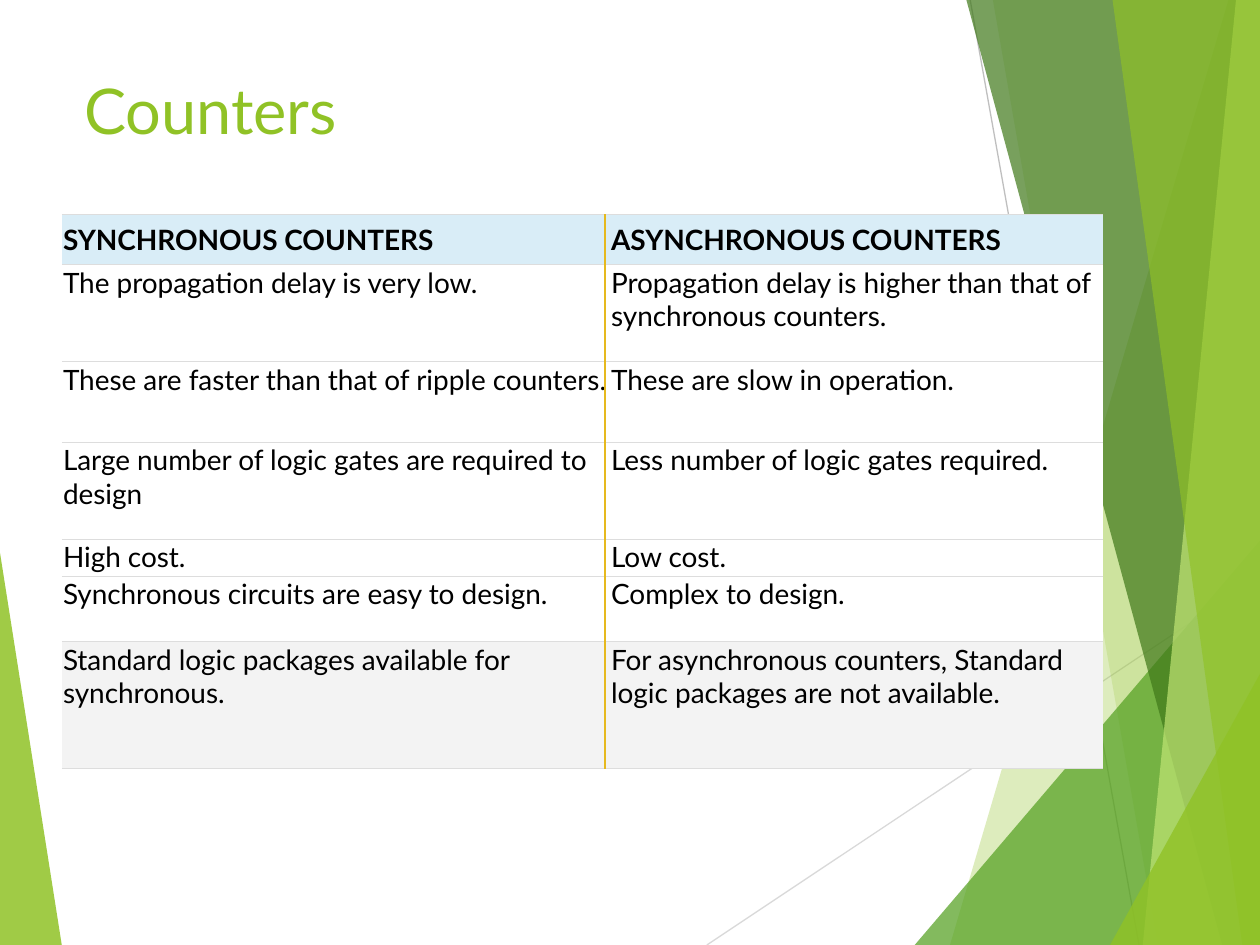
from dataclasses import dataclass

from lxml.etree import SubElement
from pptx import Presentation
from pptx.dml.color import RGBColor
from pptx.enum.shapes import MSO_CONNECTOR
from pptx.enum.text import MSO_ANCHOR
from pptx.oxml.ns import qn
from pptx.util import Inches, Pt

WIDTH, HEIGHT = Inches(10), Inches(7.5)


@dataclass(frozen=True)
class Theme:
    """Colours and type sizes of the slide."""

    font: str = "Lato"
    title_size: int = 36
    body_size: int = 16
    text: str = "000000"
    lime: str = "90C226"
    pale_lime: str = "C0E474"
    green: str = "54A021"
    dark_green: str = "3F7819"
    light_rule: str = "D9D9D9"
    dark_rule: str = "BFBFBF"
    divider: str = "E6B91E"
    header_fill: str = "D9EDF7"
    row_fill: str = "FFFFFF"
    last_fill: str = "F3F3F3"
    border: str = "DDDDDD"
    border_width: float = 0.3


THEME = Theme()

TABLE_LEFT, TABLE_TOP = 4.9, 22.67
COLUMNS = [43.5, 39.1]
ROWS = [
    (5.33, "SYNCHRONOUS COUNTERS", "ASYNCHRONOUS COUNTERS"),
    (10.27, "The propagation delay is very low.",
     "Propagation delay is higher than that of synchronous counters."),
    (8.53, "These are faster than that of ripple counters.",
     "These are slow in operation."),
    (10.27, "Large number of logic gates are required to design",
     "Less number of logic gates required."),
    (3.87, "High cost.", "Low cost."),
    (6.93, "Synchronous circuits are easy to design.", "Complex to design."),
    (13.47, "Standard logic packages available for synchronous.",
     "For asynchronous counters, Standard logic packages are not available."),
]


def across(share):
    """Turn a percentage of the slide's width into a length."""
    return round(WIDTH * share / 100)


def down(share):
    """Turn a percentage of the slide's height into a length."""
    return round(HEIGHT * share / 100)


def band(top, bottom):
    """Outline the area right of a slanted edge that crosses the whole slide."""
    return [(top, 0), (bottom, 100), (100, 100), (100, 0)]


def corner(left, top):
    """Outline a triangle in the bottom right corner."""
    return [(left, 100), (100, top), (100, 100)]


def add_facet(slide, outline, color, opacity):
    """Add a translucent polygon."""
    points = [(across(x), down(y)) for x, y in outline]
    builder = slide.shapes.build_freeform(*points[0])
    builder.add_line_segments(points[1:], close=True)
    shape = builder.convert_to_shape()
    shape.shadow.inherit = False
    shape.line.fill.background()
    shape.fill.solid()
    shape.fill.fore_color.rgb = RGBColor.from_string(color)
    tint = shape._element.spPr.find(qn("a:solidFill"))[0]
    SubElement(tint, qn("a:alpha")).set("val", str(opacity * 1000))


def add_rule(slide, start, end, color, width):
    """Add a straight line between two points."""
    connector = slide.shapes.add_connector(
        MSO_CONNECTOR.STRAIGHT,
        across(start[0]), down(start[1]), across(end[0]), down(end[1]))
    connector.line.color.rgb = RGBColor.from_string(color)
    connector.line.width = Pt(width)
    SubElement(connector._element.spPr, qn("a:effectLst"))


def write(text_frame, text, size, color, bold=False):
    """Write one run into the first paragraph of a text frame."""
    run = text_frame.paragraphs[0].add_run()
    run.text = text
    run.font.name = THEME.font
    run.font.size = Pt(size)
    run.font.bold = bold
    run.font.color.rgb = RGBColor.from_string(color)


def add_title(slide, text):
    """Add the slide's title."""
    box = slide.shapes.add_textbox(across(5.7), down(6.93), across(74.8), down(13.33))
    box.text_frame.word_wrap = True
    write(box.text_frame, text, THEME.title_size, THEME.lime)


def set_borders(cell):
    """Give a cell thin horizontal borders and no vertical ones."""
    properties = cell._tc.get_or_add_tcPr()
    for side in ("lnL", "lnR"):
        SubElement(SubElement(properties, qn(f"a:{side}")), qn("a:noFill"))
    for side in ("lnT", "lnB"):
        line = SubElement(properties, qn(f"a:{side}"), w=str(Pt(THEME.border_width)))
        fill = SubElement(line, qn("a:solidFill"))
        SubElement(fill, qn("a:srgbClr"), val=THEME.border)


def fill_cell(cell, text, fill, is_header):
    """Format one table cell and write its text."""
    cell.margin_left = cell.margin_right = Inches(0.01)
    cell.margin_top = cell.margin_bottom = Inches(0.01)
    cell.vertical_anchor = MSO_ANCHOR.MIDDLE if is_header else MSO_ANCHOR.TOP
    set_borders(cell)
    cell.fill.solid()
    cell.fill.fore_color.rgb = RGBColor.from_string(fill)
    write(cell.text_frame, text, THEME.body_size, THEME.text, is_header)


def add_comparison(slide):
    """Add the table that compares both kinds of counter."""
    height = sum(row[0] for row in ROWS)
    table = slide.shapes.add_table(
        len(ROWS), len(COLUMNS), across(TABLE_LEFT), down(TABLE_TOP),
        across(sum(COLUMNS)), down(height)).table
    table.first_row = table.horz_banding = False
    for column, share in zip(table.columns, COLUMNS):
        column.width = across(share)
    fills = [THEME.header_fill] + [THEME.row_fill] * (len(ROWS) - 2) + [THEME.last_fill]
    for index, ((share, *texts), fill) in enumerate(zip(ROWS, fills)):
        table.rows[index].height = down(share)
        for cell, text in zip(table.rows[index].cells, texts):
            fill_cell(cell, text, fill, index == 0)
    add_rule(slide, (48, TABLE_TOP), (48, TABLE_TOP + height), THEME.divider, 1)


def add_backdrop(slide):
    """Add the slanted facets and thin lines behind the content."""
    add_facet(slide, [(0, 58.5), (4.9, 100), (0, 100)], THEME.lime, 85)
    add_rule(slide, (56.1, 100), (100, 61), THEME.light_rule, 0.75)
    add_rule(slide, (77, 0), (90.4, 100), THEME.dark_rule, 0.75)
    facets = [
        (band(97.5, 75.4), THEME.lime, 30),
        (band(78.8, 91.9), THEME.lime, 20),
        (corner(72.6, 57.2), THEME.green, 72),
        (band(76.7, 97), THEME.dark_green, 70),
        (band(98.1, 90.7), THEME.pale_lime, 70),
        (band(88.3, 98.6), THEME.lime, 65),
        (corner(88.1, 71.3), THEME.lime, 80),
    ]
    for outline, color, opacity in facets:
        add_facet(slide, outline, color, opacity)


def main():
    """Build the slide and save it."""
    presentation = Presentation()
    presentation.slide_width, presentation.slide_height = WIDTH, HEIGHT
    slide = presentation.slides.add_slide(presentation.slide_layouts[6])
    add_backdrop(slide)
    add_title(slide, "Counters")
    add_comparison(slide)
    presentation.save("out.pptx")


if __name__ == "__main__":
    main()
